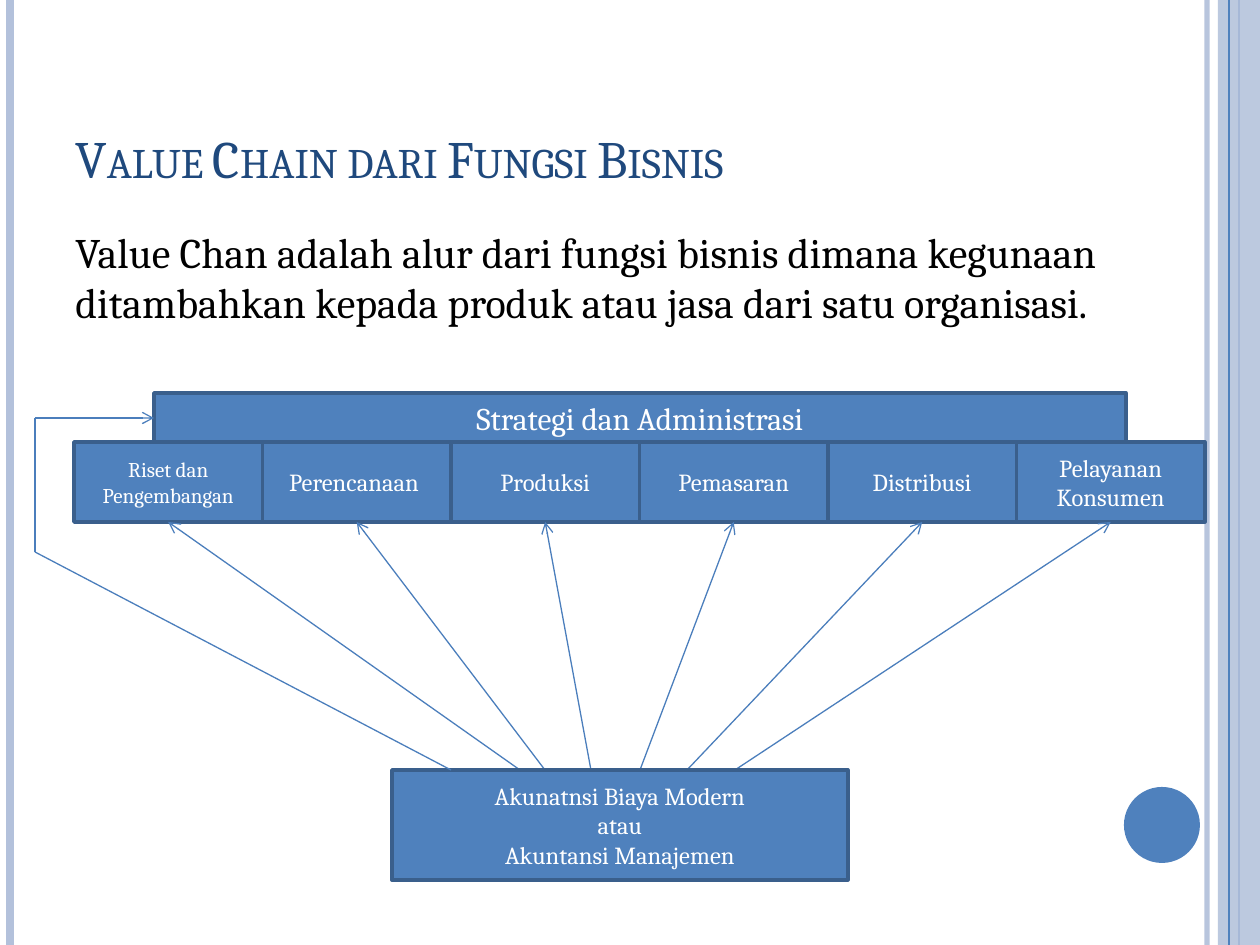
"""Builds a slide on the value chain of business functions."""
from dataclasses import dataclass

from lxml.etree import SubElement
from pptx import Presentation
from pptx.dml.color import RGBColor
from pptx.enum.shapes import MSO_CONNECTOR, MSO_SHAPE
from pptx.enum.text import MSO_ANCHOR, PP_ALIGN
from pptx.oxml.ns import qn
from pptx.util import Emu, Pt


@dataclass(frozen=True)
class Theme:
    font: str = "Cambria"
    title: RGBColor = RGBColor(0x1F, 0x49, 0x7D)
    body: RGBColor = RGBColor(0, 0, 0)
    label: RGBColor = RGBColor(0xFF, 0xFF, 0xFF)
    accent: RGBColor = RGBColor(0x4F, 0x81, 0xBD)
    border: RGBColor = RGBColor(0x3A, 0x5F, 0x8C)
    arrow: RGBColor = RGBColor(0x4B, 0x7E, 0xBC)
    pale: RGBColor = RGBColor(0xB3, 0xC1, 0xDB)
    title_size: int = 30
    body_size: int = 24
    heading_size: int = 18
    label_size: int = 14
    small_size: int = 12


theme = Theme()
PX = 914400 / 126


def add_line(page, ends, color, width, arrow=False):
    line = page.shapes.add_connector(MSO_CONNECTOR.STRAIGHT, *(Emu(round(n * PX)) for n in ends))
    line.line.color.rgb = color
    line.line.width = Pt(width)
    SubElement(line._element.spPr, qn("a:effectLst"))
    if arrow:
        SubElement(line.line._get_or_add_ln(), qn("a:tailEnd"), type="arrow")
    return line


def add_box(page, frame, lines=(), size=0, shape=MSO_SHAPE.RECTANGLE, fill=theme.accent,
            border=theme.border, color=theme.label, align=PP_ALIGN.CENTER, anchor=MSO_ANCHOR.MIDDLE):
    box = page.shapes.add_shape(shape, *(Emu(round(n * PX)) for n in frame))
    box.shadow.inherit = False
    box.fill.background()
    if fill:
        box.fill.solid()
        box.fill.fore_color.rgb = fill
    box.line.fill.background()
    if border:
        box.line.color.rgb = border
        box.line.width = Pt(2)
    text = box.text_frame
    text.word_wrap = True
    text.vertical_anchor = anchor
    if lines:
        text.text = "\n".join(lines)
    for para in text.paragraphs:
        para.alignment = align
        para.font.name = theme.font
        if size:
            para.font.size = Pt(size)
        para.font.color.rgb = color
    return box


deck = Presentation()
deck.slide_width, deck.slide_height = Emu(round(1260 * PX)), Emu(round(945 * PX))
page = deck.slides.add_slide(deck.slide_layouts[6])

right_rule = add_line(page, (1207, 0, 1207, 945), theme.pale, 3)
add_line(page, (10, 0, 10, 945), theme.pale, 4.5)
add_line(page, (1239, 0, 1239, 945), theme.accent, 1.5)
side_band = add_box(page, (1218, 0, 42, 945), fill=theme.pale, border=None)
add_line(page, (1229, 0, 1229, 945), theme.accent, 0.75)
add_box(page, (1124, 787, 76, 76), shape=MSO_SHAPE.OVAL, border=None)
for item, opacity in ((right_rule, 93), (side_band, 87)):
    tint = next(item._element.spPr.iter(qn("a:srgbClr")))
    SubElement(tint, qn("a:alpha"), val=str(opacity * 1000))

title = add_box(page, (63, 38, 1029, 157), ["Value Chain dari Fungsi Bisnis"], theme.title_size,
                fill=None, border=None, color=theme.title, align=PP_ALIGN.LEFT, anchor=MSO_ANCHOR.BOTTOM)
title.text_frame.paragraphs[0].font._element.set("cap", "small")
body = add_box(page, (63, 220, 1123, 672),
               ["Value Chan adalah alur dari fungsi bisnis dimana kegunaan ditambahkan kepada "
                "produk atau jasa dari satu organisasi."], theme.body_size,
               fill=None, border=None, color=theme.body, align=PP_ALIGN.LEFT, anchor=MSO_ANCHOR.TOP)
body.text_frame.paragraphs[0].space_before = Pt(6)

add_box(page, (154, 393, 972, 49), ["Strategi dan Administrasi"], theme.heading_size)
functions = [
    ("Riset dan Pengembangan", theme.small_size, 520),
    ("Perencanaan ", theme.label_size, 545),
    ("Produksi", theme.label_size, 591),
    ("Pemasaran", theme.label_size, 640),
    ("Distribusi", theme.label_size, 687),
    ("Pelayanan Konsumen", theme.label_size, 735),
]
chain_left, chain_width, chain_top, chain_height, hub_top = 74, 1131, 442, 80, 770
step = chain_width / len(functions)
for index, (name, size, start) in enumerate(functions):
    left = chain_left + index * step
    add_box(page, (left, chain_top, step, chain_height), [name], size)
    add_line(page, (start, hub_top, left + step / 2, chain_top + chain_height), theme.arrow, 0.75, True)

add_box(page, (392, hub_top, 456, 110),
        ["Akunatnsi Biaya Modern", "atau", "Akuntansi Manajemen"], theme.label_size)
route = [(451, hub_top), (35, 552), (35, 418), (154, 418)]
for start, end in zip(route, route[1:]):
    add_line(page, (*start, *end), theme.arrow, 0.75, end == route[-1])

deck.save("out.pptx")
